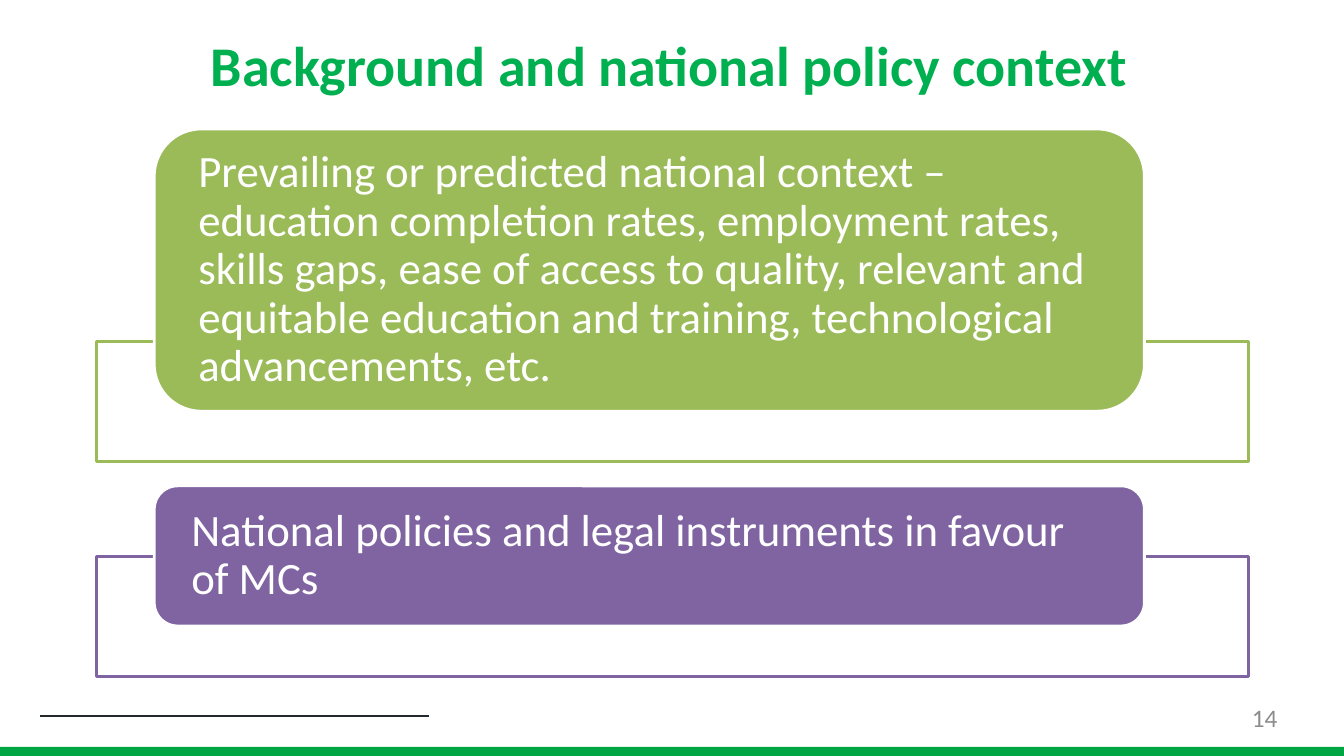
from lxml import etree
from pptx import Presentation
from pptx.dml.color import RGBColor
from pptx.enum import shapes, text
from pptx.oxml.ns import qn
from pptx.util import Inches, Pt

WHITE = RGBColor(0xFF, 0xFF, 0xFF)
TITLE_GREEN = RGBColor(0x00, 0xB0, 0x50)
BAR_GREEN = RGBColor(0x00, 0xA6, 0x43)
OLIVE = RGBColor(0x9B, 0xBB, 0x59)
PURPLE = RGBColor(0x80, 0x64, 0xA2)
INK = RGBColor(0x23, 0x28, 0x2A)
GREY = RGBColor(0x8C, 0x8C, 0x8C)

FRAME_HEIGHT = 1.19
LABEL_INDENT = 0.57
LABEL_WIDTH = 9.82
LABEL_RISE = 0.5

TOPICS = [
    ("Prevailing or predicted national context – education completion rates, "
     "employment rates, skills gaps, ease of access to quality, relevant and "
     "equitable education and training, technological advancements, etc.",
     OLIVE, 4.58, 2.8),
    ("National policies and legal instruments in favour of MCs",
     PURPLE, 6.71, 1.39),
]


def add_box(s, kind, left, top, width, height, fill, line=None, weight=2):
    """Add a flat preset shape, outlined only when a line colour is given."""
    sp = s.shapes.add_shape(kind, Inches(left), Inches(top), Inches(width), Inches(height))
    sp.shadow.inherit = False
    sp.fill.solid()
    sp.fill.fore_color.rgb = fill
    if line is None:
        sp.line.fill.background()
    else:
        sp.line.color.rgb = line
        sp.line.width = Pt(weight)
    return sp


def write(sp, content, size, color, bold=False, align=text.PP_ALIGN.LEFT,
          anchor=text.MSO_ANCHOR.TOP, left=0, right=0, spacing=None):
    """Fill a shape with one formatted paragraph."""
    tf = sp.text_frame
    tf.word_wrap = True
    tf.vertical_anchor = anchor
    tf.margin_left, tf.margin_right = Inches(left), Inches(right)
    tf.margin_top = tf.margin_bottom = 0
    p = tf.paragraphs[0]
    p.alignment = align
    if spacing is not None:
        p.line_spacing = spacing
    r = p.add_run()
    r.text = content
    r.font.name = "Calibri"
    r.font.size = Pt(size)
    r.font.bold = bold
    r.font.color.rgb = color


def add_title(s, left, top, width, height):
    """Add the slide heading."""
    sp = add_box(s, shapes.MSO_SHAPE.RECTANGLE, left, top, width, height, WHITE, WHITE, 0.5)
    write(sp, "Background and national policy context", 40, TITLE_GREEN,
          bold=True, left=0.09, spacing=Pt(51.6))


def add_topic(s, left, bottom, width, label_height, content, color):
    """Add an outlined frame with a rounded label overlapping its top edge."""
    add_box(s, shapes.MSO_SHAPE.RECTANGLE, left, bottom - FRAME_HEIGHT,
            width, FRAME_HEIGHT, WHITE, color)
    sp = add_box(s, shapes.MSO_SHAPE.ROUNDED_RECTANGLE, left + LABEL_INDENT,
                 bottom - LABEL_RISE - label_height, LABEL_WIDTH, label_height, color, WHITE)
    write(sp, content, 32, WHITE, anchor=text.MSO_ANCHOR.MIDDLE,
          left=0.3, right=0.3, spacing=0.9)


def add_footer(s, left, top, width, height):
    """Add the rule, the page number and the green bar at the foot."""
    rule = s.shapes.add_connector(shapes.MSO_CONNECTOR.STRAIGHT, Inches(left + 0.4),
                                  Inches(top + 0.13), Inches(left + 4.25), Inches(top + 0.13))
    rule.line.color.rgb = INK
    rule.line.width = Pt(1.5)
    etree.SubElement(rule._element.spPr, qn("a:effectLst"))
    add_box(s, shapes.MSO_SHAPE.RECTANGLE, left, top + height - 0.09, width, 0.09, BAR_GREEN)
    number = s.shapes.add_textbox(Inches(left + 9.6), Inches(top), Inches(3.07), Inches(0.38))
    write(number, "14", 18, GREY, align=text.PP_ALIGN.RIGHT)


def main():
    """Build and save the slide."""
    prs = Presentation()
    prs.slide_width, prs.slide_height = Inches(13.33), Inches(7.5)
    s = prs.slides.add_slide(prs.slide_layouts[6])
    add_title(s, 2, 0.25, 10.54, 0.73)
    for content, color, bottom, label_height in TOPICS:
        add_topic(s, 0.96, bottom, 11.42, label_height, content, color)
    add_footer(s, 0, 6.97, 13.33, 0.53)
    prs.save("out.pptx")


if __name__ == "__main__":
    main()
